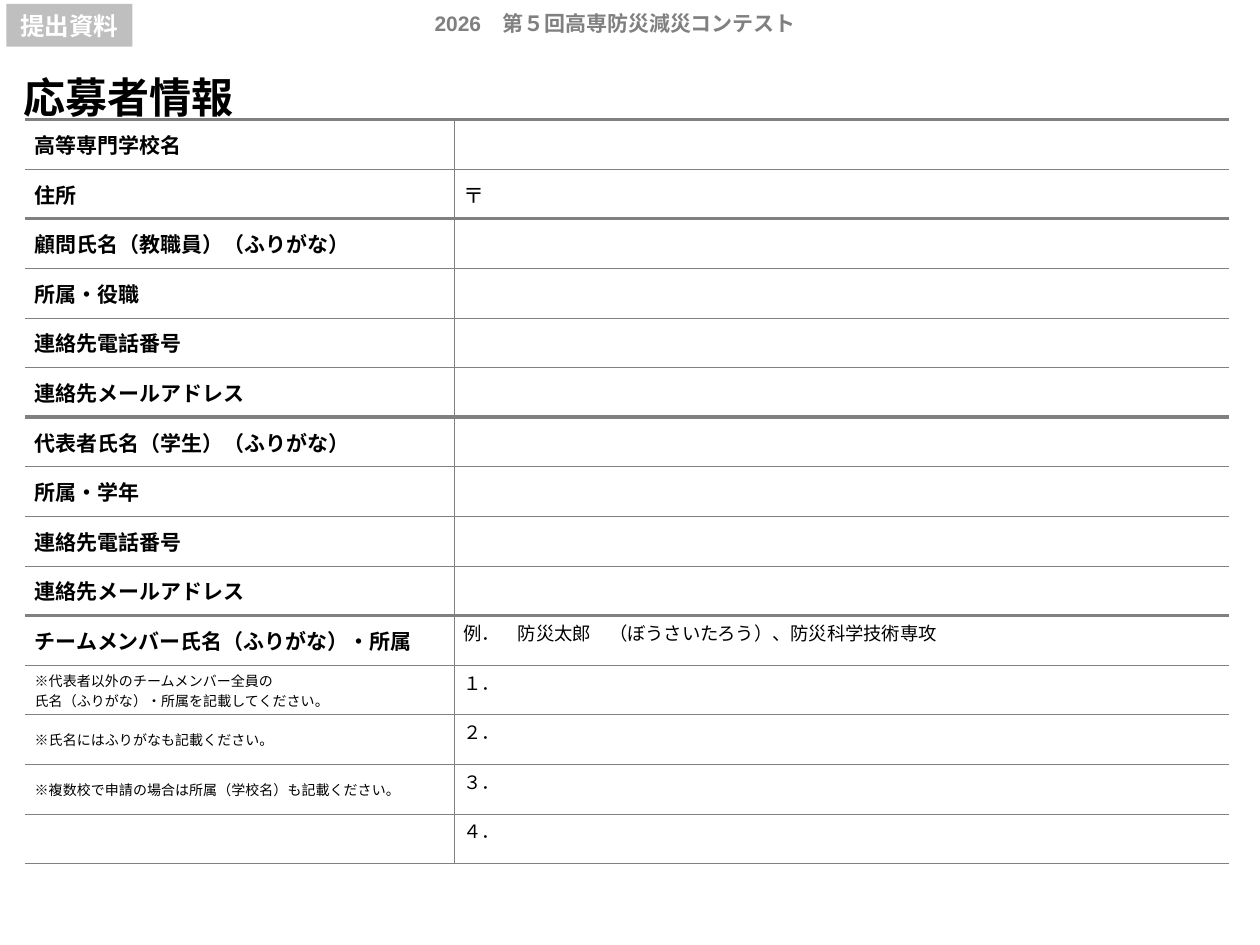
from lxml.etree import SubElement as Sub
from pptx import Presentation
from pptx.dml.color import RGBColor
from pptx.enum.shapes import MSO_SHAPE as Shape
from pptx.enum.text import MSO_ANCHOR as Anchor, MSO_AUTO_SIZE as Auto, PP_ALIGN as Align
from pptx.oxml.ns import qn
from pptx.util import Cm, Pt

GOTHIC = "Noto Sans CJK JP"
GRAY = "808080"
hue = RGBColor.from_string


def write(frame, text, size=12, font=GOTHIC, color="000000", bold=False,
          align=Align.LEFT, space=None):
    """Fill a text frame, one paragraph per line of text."""
    for i, line in enumerate(text.split("\n")):
        para = frame.add_paragraph() if i else frame.paragraphs[0]
        para.alignment = align
        if space:
            para.line_spacing = Pt(space)
        if not line:
            para._p.get_or_add_endParaRPr().set("sz", str(size * 100))
            continue
        run = para.add_run()
        run.text = line
        run.font.size, run.font.bold, run.font.name = Pt(size), bold, font
        run.font.color.rgb = hue(color)
        Sub(run._r.rPr, qn("a:ea"), typeface=GOTHIC)


def edge(cell, side, width):
    """Draw one cell border; a width of 0 hides it."""
    line = Sub(cell._tc.get_or_add_tcPr(), qn("a:ln" + side), w=str(int(Pt(width))))
    if width:
        Sub(Sub(line, qn("a:solidFill")), qn("a:srgbClr"), val=GRAY)
    else:
        Sub(line, qn("a:noFill"))


deck = Presentation()
deck.slide_width, deck.slide_height = Cm(25.4), Cm(19.05)
slide = deck.slides.add_slide(deck.slide_layouts[5])

# Title
title = slide.shapes.title
title.left, title.top, title.width, title.height = Cm(0.28), Cm(1.35), Cm(25.4), Cm(1.22)
frame = title.text_frame
frame.margin_left = frame.margin_right = Cm(0.19)
frame.margin_top = frame.margin_bottom = Cm(0.1)
frame.vertical_anchor, frame.auto_size = Anchor.TOP, Auto.SHAPE_TO_FIT_TEXT
write(frame, "応募者情報", size=24, bold=True)

# Contest name
head = slide.shapes.add_textbox(Cm(8.51), Cm(0.08), Cm(8.05), Cm(0.76)).text_frame
head.word_wrap = True
write(head, "2026　第５回高専防災減災コンテスト", font="Arial", color=GRAY, bold=True)

# Entry form: label, label format, answer, answer format
name = {"bold": True}
latin = {"bold": True, "font": "Calibri"}
note = {"size": 8}
plain = {"font": "Calibri"}
member = {"size": 10.5, "font": "Calibri", "space": 6}
rows = [
    ("高等専門学校名", latin, "", plain),
    ("住所", latin, "〒", plain),
    ("顧問氏名（教職員）（ふりがな）", name, "", plain),
    ("所属・役職", name, "", plain),
    ("連絡先電話番号", name, "", plain),
    ("連絡先メールアドレス", name, "", plain),
    ("代表者氏名（学生）（ふりがな）", name, "", plain),
    ("所属・学年", name, "", plain),
    ("連絡先電話番号", name, "", plain),
    ("連絡先メールアドレス", name, "", plain),
    ("チームメンバー氏名（ふりがな）・所属", name,
     "例．　防災太郎　（ぼうさいたろう）、防災科学技術専攻", member),
    ("※代表者以外のチームメンバー全員の\n氏名（ふりがな）・所属を記載してください。", note, "１．", member),
    ("※氏名にはふりがなも記載ください。", note, "２．", member),
    ("※複数校で申請の場合は所属（学校名）も記載ください。", note, "３．", member),
    ("", note, "４．", member),
]
starts = {0, 2, 6, 10}  # first row of each section

form = slide.shapes.add_table(len(rows), 2, Cm(0.51), Cm(2.41), Cm(24.26), Cm(len(rows))).table
form.first_row = form.horz_banding = False
form.columns[0].width, form.columns[1].width = Cm(8.64), Cm(15.62)

for r, (label, style, answer, look) in enumerate(rows):
    form.rows[r].height = Cm(1)
    for c, (text, fmt) in enumerate([(label, style), (answer, look)]):
        cell = form.cell(r, c)
        cell.margin_left = cell.margin_right = Cm(0.19)
        cell.margin_top = cell.margin_bottom = Cm(0.1)
        cell.vertical_anchor = Anchor.MIDDLE
        edge(cell, "L", 0.5 if c else 0)
        edge(cell, "R", 0 if c else 0.5)
        edge(cell, "T", 2.25 if r in starts else 0.5)
        edge(cell, "B", 2.25 if r + 1 in starts else 0.5)
        cell.fill.solid()
        cell.fill.fore_color.rgb = hue("FFFFFF")
        write(cell.text_frame, text, **fmt)

# Tag in the corner
tag = slide.shapes.add_shape(Shape.RECTANGLE, Cm(0.13), Cm(0.08), Cm(2.54), Cm(0.86))
tag.shadow.inherit = False
tag.fill.solid()
tag.fill.fore_color.rgb = hue("BFBFBF")
tag.line.fill.background()
write(tag.text_frame, "提出資料", size=14, font="Arial", color="FFFFFF", bold=True,
      align=Align.CENTER)

deck.save("out.pptx")
